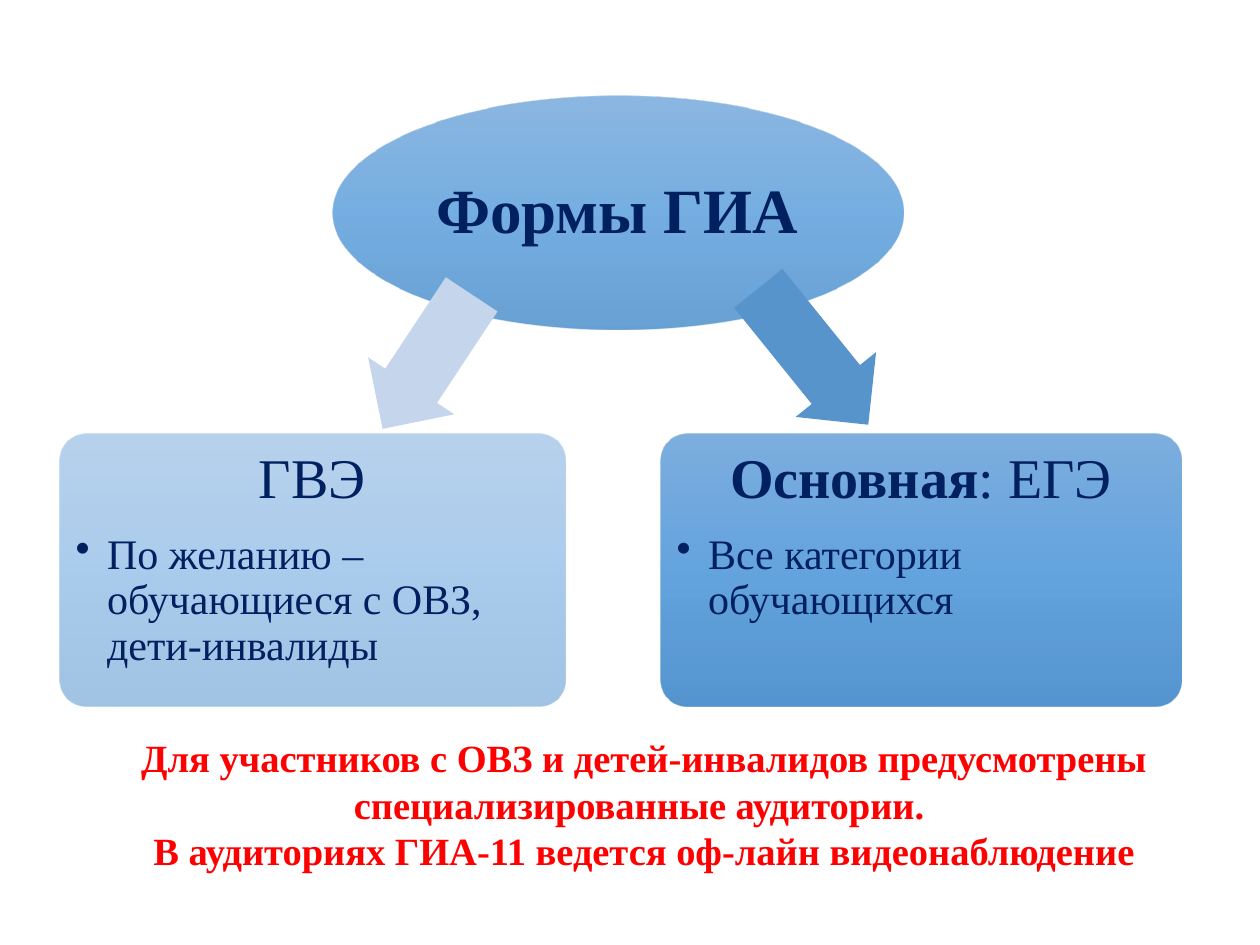
from dataclasses import dataclass

from lxml.etree import SubElement
from pptx import Presentation
from pptx.dml.color import RGBColor
from pptx.enum.shapes import MSO_SHAPE
from pptx.enum.text import MSO_ANCHOR, MSO_AUTO_SIZE, PP_ALIGN
from pptx.oxml.ns import qn
from pptx.util import Inches, Pt

FONT = "Times New Roman"
NAVY = "002060"
RED = "FF0000"
STOPS = ((0, "71A6DB"), (50, "559BDB"), (100, "448ACA"))


@dataclass
class Box:
    left: float
    top: float
    width: float
    height: float

    def inset(self, gap: float) -> "Box":
        return Box(self.left + gap, self.top + gap,
                   self.width - 2 * gap, self.height - 2 * gap)

    def spans(self) -> list:
        return [Inches(n) for n in (self.left, self.top, self.width, self.height)]


@dataclass
class Card:
    box: Box
    alpha: int
    strong: str
    plain: str
    note: str
    arrow: Box
    turn: float
    tint: str


CARDS = [
    Card(Box(5.24, 3.44, 4.14, 2.17), 90, "Основная", ": ЕГЭ",
         "Все категории обучающихся", Box(5.76, 2.42, 1.39, 0.82), 231.1, "5794CB"),
    Card(Box(0.47, 3.44, 4.02, 2.17), 50, "", "ГВЭ",
         "По желанию – обучающиеся с ОВЗ, дети-инвалиды",
         Box(2.75, 2.46, 1.28, 0.82), 303.5, "C5D5EB"),
]
CLOSING = (
    "Для участников с ОВЗ и детей-инвалидов предусмотрены специализированные аудитории. ",
    "В аудиториях ГИА-11 ведется оф-лайн видеонаблюдение",
)


def color(code: str) -> RGBColor:
    return RGBColor.from_string(code)


def add_shape(slide, kind: MSO_SHAPE, box: Box):
    shape = slide.shapes.add_shape(kind, *box.spans())
    shape.shadow.inherit = False
    shape.line.fill.background()
    return shape


def shade(shape, alpha: int) -> None:
    shape.fill.gradient()
    shape.fill.gradient_angle = 270
    stops = shape.element.spPr.find(".//" + qn("a:gsLst"))
    for stop in list(stops):
        stops.remove(stop)
    for place, code in STOPS:
        stop = SubElement(stops, qn("a:gs"), pos=str(place * 1000))
        tone = SubElement(stop, qn("a:srgbClr"), val=code)
        SubElement(tone, qn("a:alpha"), val=str(alpha * 1000))


def add_text(slide, box: Box, pad: float):
    frame = slide.shapes.add_textbox(*box.spans()).text_frame
    frame.word_wrap = True
    frame.margin_left = frame.margin_right = Inches(pad)
    frame.margin_top = frame.margin_bottom = Inches(pad)
    return frame


def style(para, size: int, code: str) -> None:
    para.font.name = FONT
    para.font.size = Pt(size)
    para.font.color.rgb = color(code)


def add_bullet(para) -> None:
    props = para._p.get_or_add_pPr()
    props.set("marL", str(Inches(0.25)))
    props.set("indent", str(-Inches(0.25)))
    SubElement(props, qn("a:buChar"), char="•")


def add_title(slide) -> None:
    shade(add_shape(slide, MSO_SHAPE.OVAL, Box(2.64, 0.76, 4.53, 1.86)), 80)
    frame = add_text(slide, Box(3.3, 1.03, 3.2, 1.32), 0.03)
    frame.vertical_anchor = MSO_ANCHOR.MIDDLE
    para = frame.paragraphs[0]
    para.text = "Формы ГИА"
    para.alignment = PP_ALIGN.CENTER
    para.line_spacing = 0.9
    style(para, 36, NAVY)
    para.font.bold = True


def add_card(slide, card: Card) -> None:
    arrow = add_shape(slide, MSO_SHAPE.LEFT_ARROW, card.arrow)
    arrow.adjustments[0] = 0.6
    arrow.adjustments[1] = 0.5
    arrow.rotation = card.turn
    arrow.fill.solid()
    arrow.fill.fore_color.rgb = color(card.tint)

    panel = add_shape(slide, MSO_SHAPE.ROUNDED_RECTANGLE, card.box)
    panel.adjustments[0] = 0.1
    shade(panel, card.alpha)

    frame = add_text(slide, card.box.inset(0.06), 0.07)
    head = frame.paragraphs[0]
    head.alignment = PP_ALIGN.CENTER
    head.line_spacing = 0.9
    head.space_after = Pt(13)
    style(head, 32, NAVY)
    if card.strong:
        run = head.add_run()
        run.text = card.strong
        run.font.bold = True
    head.add_run().text = card.plain

    note = frame.add_paragraph()
    note.text = card.note
    note.level = 1
    note.line_spacing = 0.9
    add_bullet(note)
    style(note, 24, NAVY)


def add_closing(slide) -> None:
    frame = slide.shapes.add_textbox(*Box(0.47, 5.78, 9.28, 1.21).spans()).text_frame
    frame.word_wrap = True
    frame.auto_size = MSO_AUTO_SIZE.SHAPE_TO_FIT_TEXT
    for spot, line in enumerate(CLOSING):
        para = frame.add_paragraph() if spot else frame.paragraphs[0]
        para.text = line
        para.alignment = PP_ALIGN.CENTER
        style(para, 22, RED)
        para.font.bold = True


def main() -> None:
    deck = Presentation()
    deck.slide_width = Inches(10)
    deck.slide_height = Inches(7.5)
    slide = deck.slides.add_slide(deck.slide_layouts[6])
    add_title(slide)
    for card in CARDS:
        add_card(slide, card)
    add_closing(slide)
    deck.save("out.pptx")


if __name__ == "__main__":
    main()
